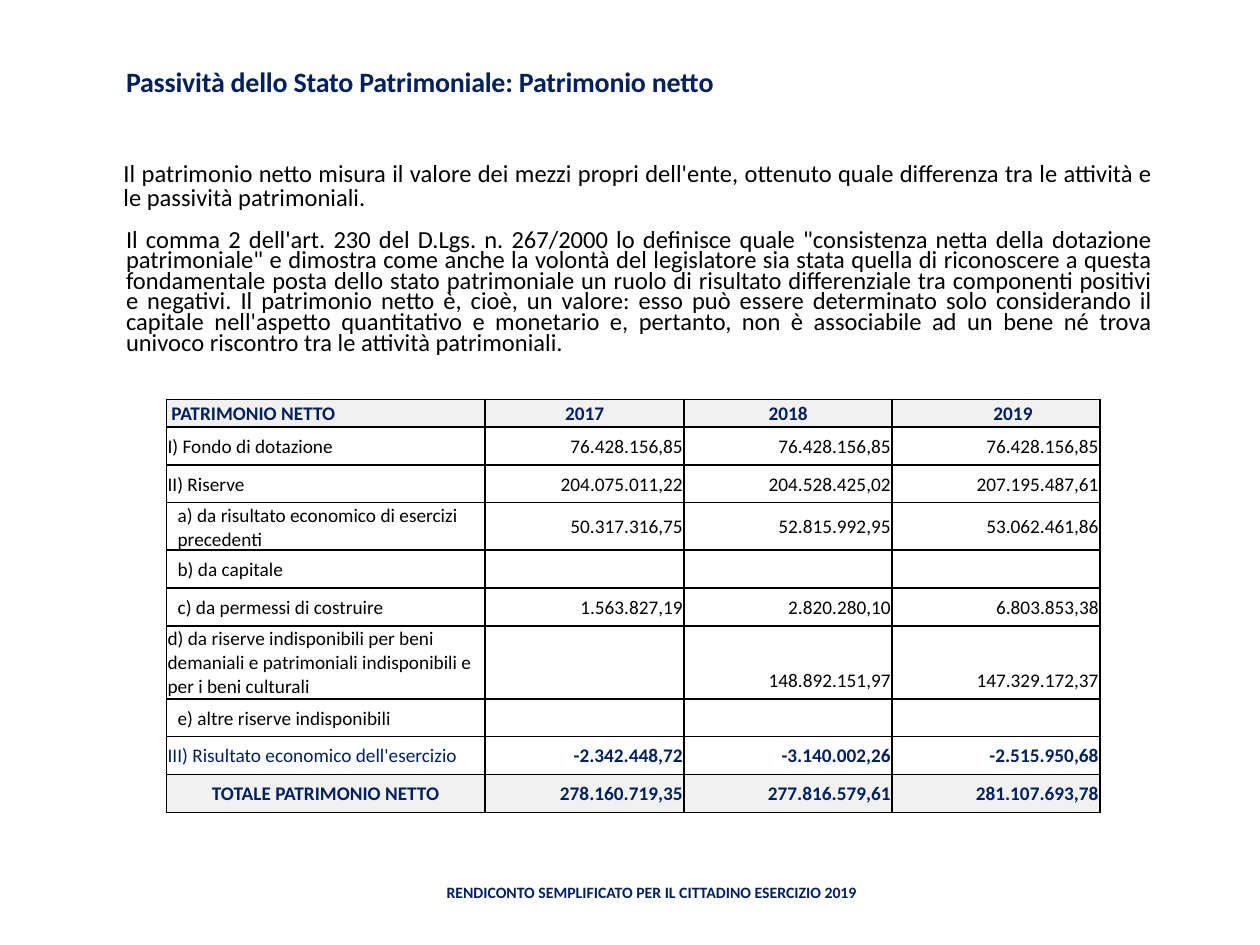
"""Build the slide on net equity: title, two paragraphs, table and footer."""
from dataclasses import dataclass

from lxml import etree
from pptx import Presentation
from pptx import util as u
from pptx.dml.color import RGBColor
from pptx.enum import text
from pptx.oxml.ns import qn

COLS, ROWS = 100, 75
NAVY, BLACK, GREY = "002060", "000000", "F1F1F1"
LEFT, MID, RIGHT, JUST = (text.PP_ALIGN.LEFT, text.PP_ALIGN.CENTER,
                          text.PP_ALIGN.RIGHT, text.PP_ALIGN.JUSTIFY)
WIDTHS = (25.3, 15.8, 16.5, 16.5)


@dataclass(frozen=True)
class Area:
    """A place on the slide in grid columns and rows."""
    col: float
    row: float
    wide: float
    high: float


@dataclass(frozen=True)
class Style:
    """The look of a text."""
    size: float
    color: str = BLACK
    bold: bool = False
    align: int = LEFT


@dataclass(frozen=True)
class Line:
    """One row of the table."""
    label: str
    values: tuple = ("", "", "")
    high: float = 3
    inset: float = 0.01
    label_style: Style = Style(11)
    style: Style = Style(11, align=RIGHT)
    fill: str = ""


@dataclass(frozen=True)
class Para:
    """One paragraph of the body."""
    words: str
    indent: float
    pitch: float
    after: float


HEAD = Style(11, NAVY, True)
HEAD_MID = Style(11, NAVY, True, MID)
SUM = Style(11, NAVY, True, RIGHT)
SPLIT = 6
LINES = (
    Line("PATRIMONIO NETTO", ("2017", "2018", "2019"), 2.2, 0.04, HEAD, HEAD_MID, GREY),
    Line("I) Fondo di dotazione", ("76.428.156,85",) * 3),
    Line("II) Riserve", ("204.075.011,22", "204.528.425,02", "207.195.487,61")),
    Line("a) da risultato economico di esercizi precedenti",
         ("50.317.316,75", "52.815.992,95", "53.062.461,86"), 3.5, 0.09),
    Line("b) da capitale", inset=0.09),
    Line("c) da permessi di costruire",
         ("1.563.827,19", "2.820.280,10", "6.803.853,38"), inset=0.09),
    Line("d) da riserve indisponibili per beni demaniali e patrimoniali "
         "indisponibili e per i beni culturali", high=2.8),
    Line("", ("", "148.892.151,97", "147.329.172,37")),
    Line("e) altre riserve indisponibili", inset=0.09),
    Line("III) Risultato economico dell'esercizio",
         ("-2.342.448,72", "-3.140.002,26", "-2.515.950,68"),
         label_style=Style(11, NAVY), style=SUM),
    Line("TOTALE PATRIMONIO NETTO",
         ("278.160.719,35", "277.816.579,61", "281.107.693,78"),
         label_style=HEAD_MID, style=SUM, fill=GREY),
)
PARAS = (
    Para("Il patrimonio netto misura il valore dei mezzi propri dell'ente, ottenuto "
         "quale differenza tra le attività e le passività patrimoniali.", 0.08, 0.8, 0),
    Para("Il comma 2 dell'art. 230 del D.Lgs. n. 267/2000 lo definisce quale "
         "\"consistenza netta della dotazione patrimoniale\" e dimostra come anche la "
         "volontà del legislatore sia stata quella di riconoscere a questa fondamentale "
         "posta dello stato patrimoniale un ruolo di risultato differenziale tra "
         "componenti positivi e negativi. Il patrimonio netto è, cioè, un valore: esso "
         "può essere determinato solo considerando il capitale nell'aspetto quantitativo "
         "e monetario e, pertanto, non è associabile ad un bene né trova univoco "
         "riscontro tra le attività patrimoniali.", 0.1, 0.7, 2),
)


def paint(code: str) -> RGBColor:
    """Turn a hex string into a colour."""
    return RGBColor.from_string(code)


def span(cells: float) -> int:
    """Turn grid cells into a length."""
    return u.Inches(10 / COLS * cells)


def box(area: Area) -> tuple:
    """Turn an area into left, top, width and height."""
    return tuple(span(n) for n in (area.col, area.row, area.wide, area.high))


def write(para, words: str, style: Style) -> None:
    """Set the words of a paragraph and format them."""
    para.text = words
    para.alignment = style.align
    for run in para.runs:
        font = run.font
        font.name, font.size, font.bold = "Calibri", u.Pt(style.size), style.bold
        font.color.rgb = paint(style.color)
    if not words:
        etree.SubElement(para._p, qn("a:endParaRPr"), sz=str(int(style.size * 100)))


def edge(cell, bare: str) -> None:
    """Draw the borders of a cell, except on the bare side."""
    props = cell._tc.get_or_add_tcPr()
    for side in "LRTB":
        line = etree.SubElement(props, qn(f"a:ln{side}"), w=str(u.Pt(1)))
        if side == bare:
            etree.SubElement(line, qn("a:noFill"))
        else:
            fill = etree.SubElement(line, qn("a:solidFill"))
            etree.SubElement(fill, qn("a:srgbClr"), val=BLACK)


def fill_cell(cell, words: str, style: Style, inset: float, fill: str, bare: str) -> None:
    """Write and format one table cell."""
    cell.margin_left, cell.margin_right = u.Inches(inset), u.Inches(0.01)
    cell.margin_top, cell.margin_bottom = u.Inches(0.01), 0
    cell.vertical_anchor = text.MSO_ANCHOR.MIDDLE
    write(cell.text_frame.paragraphs[0], words, style)
    edge(cell, bare)
    if fill:
        cell.fill.solid()
        cell.fill.fore_color.rgb = paint(fill)
    else:
        cell.fill.background()


def add_grid(slide, area: Area) -> None:
    """Add the table of net equity."""
    grid = slide.shapes.add_table(len(LINES), len(WIDTHS), *box(area)).table
    for col, wide in zip(grid.columns, WIDTHS):
        col.width = span(wide)
    for r, line in enumerate(LINES):
        grid.rows[r].height = span(line.high)
        for c, words in enumerate((line.label,) + line.values):
            style = line.style if c else line.label_style
            inset = 0.01 if c else line.inset
            if words == "2019":
                inset = 0.28
            bare = {SPLIT: "B", SPLIT + 1: "T"}.get(r, "") if c else ""
            fill_cell(grid.cell(r, c), words, style, inset, line.fill, bare)
    grid.cell(SPLIT, 0).merge(grid.cell(SPLIT + 1, 0))


def add_title(slide, area: Area, words: str) -> None:
    """Move and format the title."""
    head = slide.shapes.title
    head.left, head.top, head.width, head.height = box(area)
    frame = head.text_frame
    frame.auto_size = text.MSO_AUTO_SIZE.NONE
    frame.vertical_anchor = text.MSO_ANCHOR.BOTTOM
    para = frame.paragraphs[0]
    write(para, words, Style(16, NAVY, True))
    para.line_spacing = 0.85
    para.runs[0].font._element.set("spc", "-10")


def add_body(slide, area: Area) -> None:
    """Add the two justified paragraphs."""
    frame = slide.shapes.add_textbox(*box(area)).text_frame
    frame.word_wrap = True
    frame.margin_left = frame.margin_right = 0
    for n, item in enumerate(PARAS):
        para = frame.add_paragraph() if n else frame.paragraphs[0]
        write(para, item.words, Style(14, align=JUST))
        para.line_spacing = item.pitch
        para.space_before, para.space_after = u.Pt(12), u.Pt(item.after)
        para._p.get_or_add_pPr().set("marL", str(u.Inches(item.indent)))


def add_foot(slide, area: Area, words: str) -> None:
    """Add the footer line."""
    frame = slide.shapes.add_textbox(*box(area)).text_frame
    frame.word_wrap = True
    frame.vertical_anchor = text.MSO_ANCHOR.MIDDLE
    write(frame.paragraphs[0], words, Style(9, NAVY, True, MID))


def main() -> None:
    """Build and save the deck."""
    deck = Presentation()
    deck.slide_width, deck.slide_height = span(COLS), span(ROWS)
    slide = deck.slides.add_slide(deck.slide_layouts[5])
    add_title(slide, Area(9, 3.1, 82.5, 5.2),
              "Passività dello Stato Patrimoniale: Patrimonio netto")
    add_body(slide, Area(9, 12.5, 82.5, 19.2))
    add_grid(slide, Area(13.2, 31.7, sum(WIDTHS), sum(n.high for n in LINES)))
    add_foot(slide, Area(31.9, 68.3, 39.6, 5),
             "RENDICONTO SEMPLIFICATO PER IL CITTADINO ESERCIZIO 2019")
    deck.save("out.pptx")


if __name__ == "__main__":
    main()
